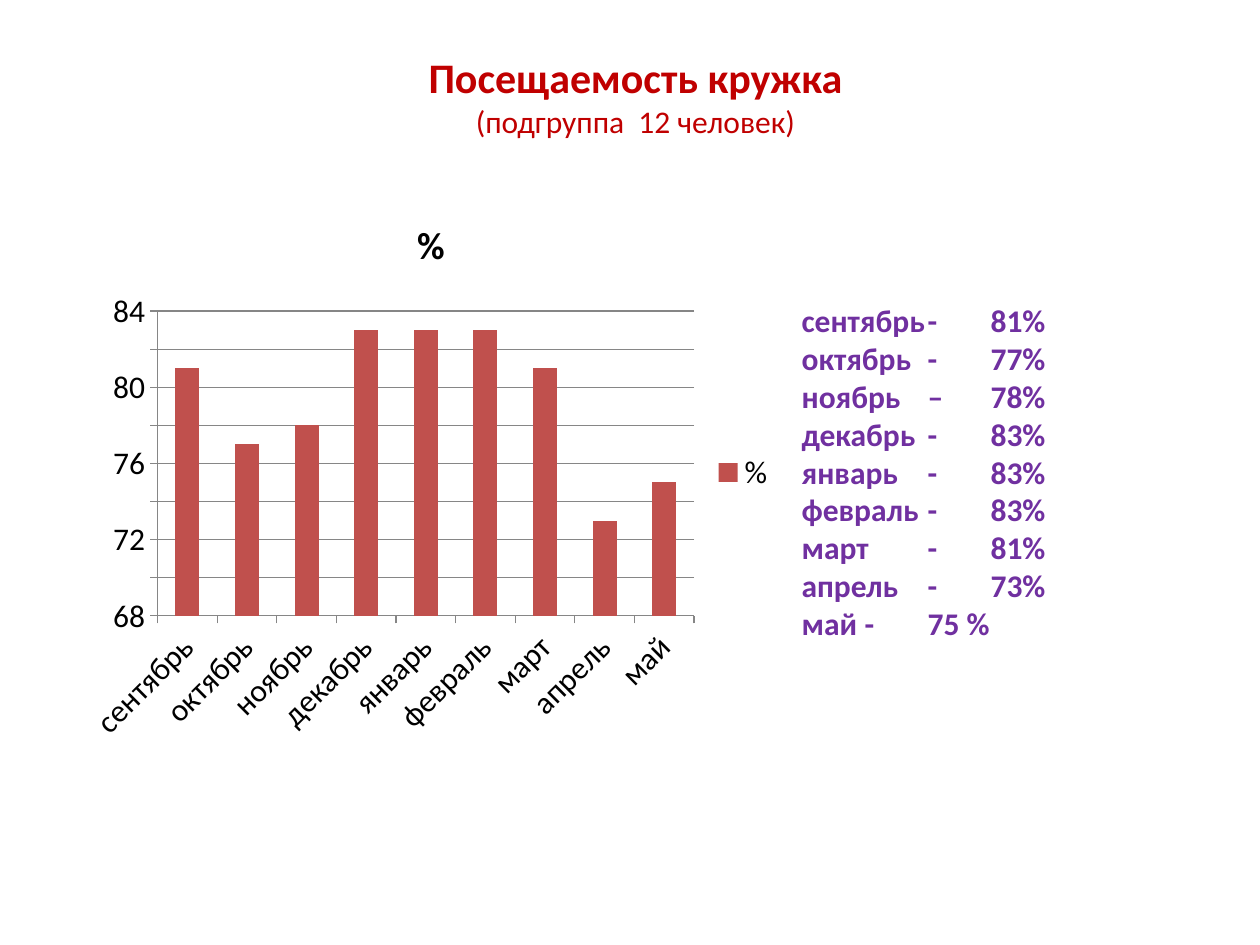
from lxml import etree
from pptx import Presentation
from pptx.chart.data import CategoryChartData
from pptx.dml.color import RGBColor
from pptx.enum.chart import XL_CHART_TYPE, XL_LEGEND_POSITION
from pptx.enum.text import MSO_ANCHOR, MSO_AUTO_SIZE, PP_ALIGN
from pptx.oxml.ns import qn
from pptx.util import Inches, Pt

COLUMNS = XL_CHART_TYPE.COLUMN_CLUSTERED
LEGEND_RIGHT = XL_LEGEND_POSITION.RIGHT
TOP = MSO_ANCHOR.TOP
NO_FIT = MSO_AUTO_SIZE.NONE
CENTER, LEFT = PP_ALIGN.CENTER, PP_ALIGN.LEFT

RED = RGBColor(0xC0, 0x00, 0x00)
PURPLE = RGBColor(0x70, 0x30, 0xA0)
BRICK = RGBColor(0xC0, 0x50, 0x4D)
GRAY = RGBColor(0x86, 0x86, 0x86)
BLACK = RGBColor(0x00, 0x00, 0x00)
FONT = "Calibri"

# Month, dash, percentage as written in the list
ATTENDANCE = [
    ("сентябрь", "-", 81, "%"),
    ("октябрь", "-", 77, "%"),
    ("ноябрь", "–", 78, "%"),
    ("декабрь", "-", 83, "%"),
    ("январь", "-", 83, "%"),
    ("февраль", "-", 83, "%"),
    ("март", "-", 81, "%"),
    ("апрель", "-", 73, "%"),
    ("май", "-", 75, " %"),
]
TAB_STOPS = (138, 172)


def px(n):
    return round(n * Inches(1) / 126)


def place(sp, left, top, width, height):
    sp.left, sp.top, sp.width, sp.height = map(px, (left, top, width, height))
    tf = sp.text_frame
    tf.word_wrap = True
    tf.auto_size = NO_FIT
    tf.vertical_anchor = TOP
    return tf


def style(font, size, color, bold=False):
    font.name = FONT
    font.size = Pt(size)
    font.bold = bold
    font.color.rgb = color


def set_plain_tabs(p, stops):
    """Remove the bullet and indent, and set left tab stops."""
    pPr = p._p.get_or_add_pPr()
    pPr.set("marL", "0")
    pPr.set("indent", "0")
    etree.SubElement(pPr, qn("a:buNone"))
    tabs = etree.SubElement(pPr, qn("a:tabLst"))
    for stop in stops:
        etree.SubElement(tabs, qn("a:tab"), pos=str(px(stop)), algn="l")


def add_title(slide):
    tf = place(slide.shapes.title, 35, 45, 1201, 102)
    tf.text = "Посещаемость кружка\n(подгруппа  12 человек)"
    for p, size, bold in zip(tf.paragraphs, (24, 18), (True, False)):
        p.alignment = CENTER
        style(p.runs[0].font, size, RED, bold)


def add_month_list(slide):
    tf = place(slide.placeholders[1], 789, 295, 407, 357)
    tf.text = "\n".join(f"{month}\t{dash}\t{value}{sign}"
                        for month, dash, value, sign in ATTENDANCE)
    for p in tf.paragraphs:
        set_plain_tabs(p, TAB_STOPS)
        p.alignment = LEFT
        p.space_before = Pt(0)
        for r in p.runs:
            style(r.font, 18, PURPLE, True)


def add_attendance_chart(slide):
    data = CategoryChartData()
    data.categories = [row[0] for row in ATTENDANCE]
    data.add_series("%", [row[2] for row in ATTENDANCE])
    chart = slide.shapes.add_chart(
        COLUMNS, px(74), px(193), px(714), px(559), data).chart
    style(chart.font, 18, BLACK)

    # Title and legend
    chart.has_title = True
    tf = chart.chart_title.text_frame
    tf.text = "%"
    style(tf.paragraphs[0].runs[0].font, 21.6, BLACK, True)
    chart.has_legend = True
    chart.legend.position = LEGEND_RIGHT
    chart.legend.include_in_layout = False

    # Axes and gridlines
    axis = chart.value_axis
    axis.minimum_scale, axis.maximum_scale, axis.major_unit = 68, 84, 2
    axis.has_major_gridlines = True
    for line in (axis.format.line, axis.major_gridlines.format.line,
                 chart.category_axis.format.line):
        line.color.rgb = GRAY
        line.width = Pt(0.75)

    # Columns
    plot = chart.plots[0]
    plot.gap_width = 150
    plot.vary_by_categories = False
    fill = plot.series[0].format.fill
    fill.solid()
    fill.fore_color.rgb = BRICK


def main():
    prs = Presentation()
    prs.slide_width, prs.slide_height = Inches(10), Inches(7.5)
    slide = prs.slides.add_slide(prs.slide_layouts[1])
    add_title(slide)
    add_attendance_chart(slide)
    add_month_list(slide)
    prs.save("out.pptx")


if __name__ == "__main__":
    main()
